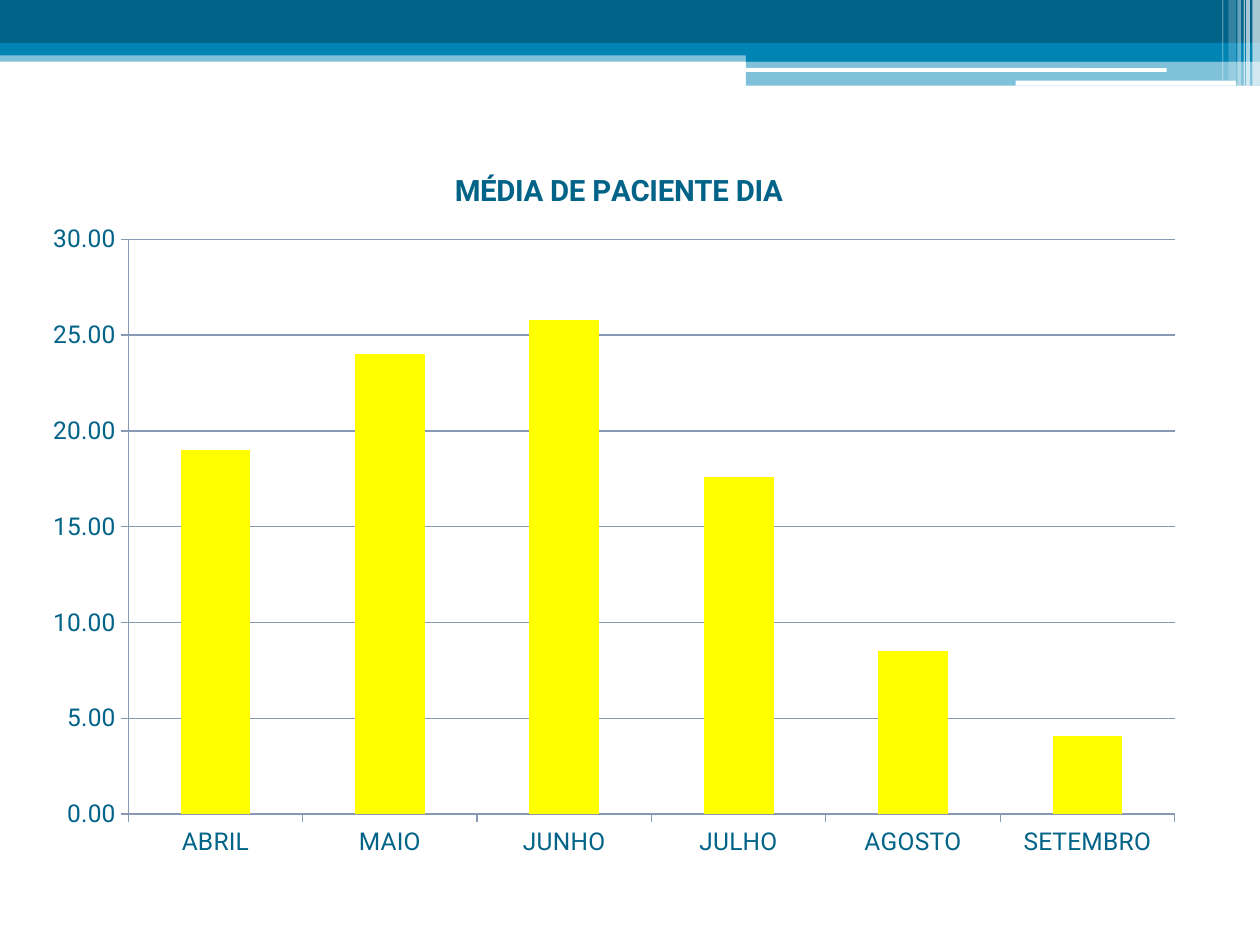
from dataclasses import dataclass

from lxml.etree import SubElement
from pptx import Presentation
from pptx.chart.data import CategoryChartData
from pptx.dml.color import RGBColor
from pptx.enum.chart import XL_CHART_TYPE as ChartType, XL_TICK_MARK as TickMark
from pptx.enum.shapes import MSO_SHAPE as Preset
from pptx.oxml.ns import qn
from pptx.util import Emu, Pt

EMU_PER_PX = 9144


@dataclass(frozen=True)
class Theme:
    dark: str = "006387"
    blue: str = "0084B4"
    white: str = "FFFFFF"
    bar: str = "FFFF00"
    axis: str = "8899B5"
    font: str = "Roboto"
    label_size: float = 14
    title_size: float = 16.8
    line_width: float = 0.75


@dataclass(frozen=True)
class Band:
    left: int
    top: int
    width: int
    height: int
    color: str
    opacity: int = 100
    rounded: bool = False


THEME = Theme()
TITLE = "MÉDIA DE PACIENTE DIA"
AVERAGES = {
    "ABRIL": 19, "MAIO": 24, "JUNHO": 25.8,
    "JULHO": 17.6, "AGOSTO": 8.5, "SETEMBRO": 4.1,
}
HEADER = [
    Band(0, 40, 1000, 9, THEME.blue, 50),
    Band(0, 0, 1000, 34, THEME.dark),
    Band(0, 34, 1000, 10, THEME.blue),
    Band(592, 39, 408, 10, THEME.blue),
    Band(592, 48, 408, 20, THEME.blue, 50),
    Band(591, 54, 335, 3, THEME.white, rounded=True),
    Band(806, 64, 175, 4, THEME.white, rounded=True),
]
STRIPES = [
    Band(left, 0, width, height, THEME.white, opacity)
    for left, width, height, opacity in (
        (994, 6, 68, 65), (989, 3, 68, 65), (987, 1, 68, 60),
        (982, 3, 68, 40), (975, 6, 64, 20), (970, 1, 64, 30),
    )
]


def px(length: int) -> Emu:
    return Emu(length * EMU_PER_PX)


def draw_band(slide, band: Band) -> None:
    preset = Preset.ROUNDED_RECTANGLE if band.rounded else Preset.RECTANGLE
    shape = slide.shapes.add_shape(
        preset, px(band.left), px(band.top), px(band.width), px(band.height)
    )
    shape.shadow.inherit = False
    shape.line.fill.background()
    shape.fill.solid()
    shape.fill.fore_color.rgb = RGBColor.from_string(band.color)
    if band.opacity < 100:
        color = shape.element.spPr.find(".//" + qn("a:srgbClr"))
        SubElement(color, qn("a:alpha"), val=str(band.opacity * 1000))


def style_font(font, *, size: float, color: str, bold: bool = False) -> None:
    font.name = THEME.font
    font.size = Pt(size)
    font.bold = bold
    font.color.rgb = RGBColor.from_string(color)


def write_text(frame, text: str, **style) -> None:
    span = frame.paragraphs[0].add_run()
    span.text = text
    style_font(span.font, **style)


def style_line(line) -> None:
    line.color.rgb = RGBColor.from_string(THEME.axis)
    line.width = Pt(THEME.line_width)


def place_part(part, index: int, **settings) -> None:
    layout = part.find(qn("c:layout"))
    if layout is None:
        layout = part.makeelement(qn("c:layout"))
        part.insert(index, layout)
    manual = SubElement(layout, qn("c:manualLayout"))
    for name, value in settings.items():
        SubElement(manual, qn(f"c:{name}"), val=str(value))


def draw_chart(slide) -> None:
    data = CategoryChartData(number_format="0.00")
    data.categories = list(AVERAGES)
    data.add_series(TITLE, list(AVERAGES.values()))
    chart = slide.shapes.add_chart(
        ChartType.COLUMN_CLUSTERED, px(23), px(109), px(927), px(582), data
    ).chart
    style_font(chart.font, size=THEME.label_size, color=THEME.dark)
    chart.has_legend = False
    chart.has_title = True
    write_text(
        chart.chart_title.text_frame, TITLE,
        size=THEME.title_size, color=THEME.dark, bold=True,
    )

    plot = chart.plots[0]
    plot.gap_width = 150
    plot.vary_by_categories = False
    fill = plot.series[0].format.fill
    fill.solid()
    fill.fore_color.rgb = RGBColor.from_string(THEME.bar)

    for axis in (chart.category_axis, chart.value_axis):
        axis.major_tick_mark = TickMark.OUTSIDE
        axis.minor_tick_mark = TickMark.NONE
        style_line(axis.format.line)
    values = chart.value_axis
    values.minimum_scale, values.maximum_scale, values.major_unit = 0, 30, 5
    values.has_major_gridlines = True
    style_line(values.major_gridlines.format.line)
    values.tick_labels.number_format = "0.00"
    values.tick_labels.number_format_is_linked = False

    title = chart.element.find(".//" + qn("c:title"))
    place_part(title, 1, xMode="edge", yMode="edge", x=0.36, y=0.04)
    area = chart.element.find(".//" + qn("c:plotArea"))
    place_part(
        area, 0, layoutTarget="inner", xMode="edge", yMode="edge",
        x=0.085, y=0.139, w=0.896, h=0.784,
    )


def main() -> None:
    deck = Presentation()
    deck.slide_width, deck.slide_height = px(1000), px(750)
    slide = deck.slides.add_slide(deck.slide_layouts[6])
    for band in HEADER + STRIPES:
        draw_band(slide, band)
    draw_chart(slide)
    deck.save("out.pptx")


if __name__ == "__main__":
    main()
